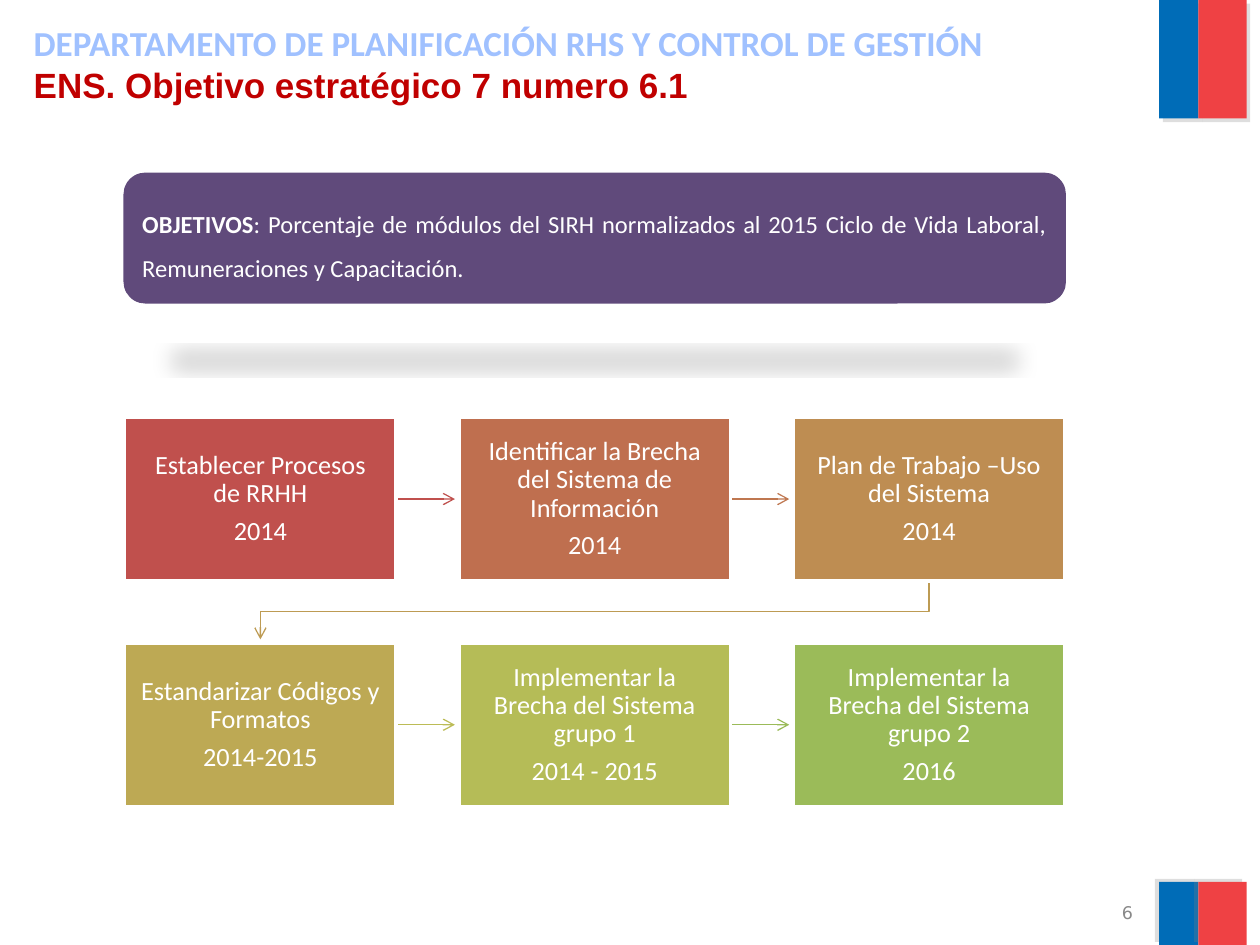
from dataclasses import dataclass

import pptx
import pptx.util
from lxml import etree
from pptx.dml.color import RGBColor
from pptx.enum.shapes import MSO_CONNECTOR, MSO_SHAPE
from pptx.enum.text import MSO_ANCHOR, PP_ALIGN
from pptx.oxml import parse_xml
from pptx.oxml.ns import qn
from pptx.util import Cm, Pt


@dataclass(frozen=True)
class Theme:
    blue: str = "006CB7"
    red: str = "EF4144"
    purple: str = "604A7B"
    white: str = "FFFFFF"
    sky: str = "A0C1FF"
    dark: str = "C00000"
    grey: str = "898989"
    head: int = 20
    goal: int = 14
    step: int = 15
    page: int = 10


theme = Theme()


def write(par, text, size=theme.step, font="Calibri", color=theme.white, bold=False,
          align=None, lead=None, after=None):
    """Add one run to a paragraph and set the paragraph's format where given."""
    run = par.add_run()
    run.text = text
    run.font.size = Pt(size)
    run.font.name = font
    run.font.bold = bold
    run.font.color.rgb = RGBColor.from_string(color)
    if align is not None:
        par.alignment = align
    if lead is not None:
        par.line_spacing = lead
    if after is not None:
        par.space_after = Pt(after)


def block(kind, left, top, width, height, fill, shade=None):
    """Add a filled shape without outline; shade holds a shadow's attributes, colour and alpha."""
    shape = slide.shapes.add_shape(kind, Cm(left), Cm(top), Cm(width), Cm(height))
    shape.fill.solid()
    shape.fill.fore_color.rgb = RGBColor.from_string(fill)
    shape.line.fill.background()
    shape.shadow.inherit = False
    if shade:
        attrs, color, alpha = shade
        effect = shape._element.spPr.find(qn("a:effectLst"))
        effect.append(parse_xml(
            '<a:outerShdw xmlns:a="http://schemas.openxmlformats.org/drawingml/2006/main" '
            f'{attrs} rotWithShape="0"><a:srgbClr val="{color}">'
            f'<a:alpha val="{alpha}000"/></a:srgbClr></a:outerShdw>'))
    return shape


deck = pptx.Presentation()
deck.slide_width, deck.slide_height = Cm(25.4), Cm(19.05)
slide = deck.slides.add_slide(deck.slide_layouts[6])

# Flag bars at the top and bottom right
for top, high, turn in ((0, 2.39, 45), (17.78, 1.27, 215)):
    shade = (f'dist="38100" dir="{turn * 60000}"', "808080", 25)
    for left, wide, fill in ((23.37, 0.79, theme.blue), (24.16, 0.97, theme.red)):
        block(MSO_SHAPE.RECTANGLE, left, top, wide, high, fill, shade)

# Page number
page = slide.shapes.add_textbox(Cm(17.17), Cm(18.14), Cm(5.92), Cm(0.53)).text_frame
page.word_wrap = True
page.vertical_anchor = MSO_ANCHOR.MIDDLE
write(page.paragraphs[0], "6", size=theme.page, font="DejaVu Sans", color=theme.grey,
      align=PP_ALIGN.RIGHT)

# Objective
goal = block(MSO_SHAPE.ROUNDED_RECTANGLE, 2.49, 3.48, 19, 2.64, theme.purple,
             ('blurRad="152400" dist="317500" dir="5400000" sx="90000" sy="-19000"',
              "000000", 15)).text_frame
goal.word_wrap = True
goal.vertical_anchor = MSO_ANCHOR.MIDDLE
par = goal.paragraphs[0]
write(par, "OBJETIVOS", size=theme.goal, bold=True, align=PP_ALIGN.JUSTIFY, lead=1.5)
write(par, ": Porcentaje de módulos del SIRH normalizados al 2015 Ciclo de Vida Laboral, "
      "Remuneraciones y Capacitación.", size=theme.goal)

# Steps: text, year, box colour, colour of the arrow to the next step
steps = [
    ("Establecer Procesos de RRHH", "2014", "C0504D", "C0504D"),
    ("Identificar la Brecha del Sistema de Información", "2014", "BF6F4F", "BF7750"),
    ("Plan de Trabajo –Uso del Sistema", "2014", "BE8D52", "BD9B53"),
    ("Estandarizar Códigos y Formatos", "2014-2015", "BDA954", "BCBC56"),
    ("Implementar la Brecha del Sistema grupo 1", "2014 - 2015", "B5BC57", "9BBB59"),
    ("Implementar la Brecha del Sistema grupo 2", "2016", "9BBB59", None),
]
cols = 3
wide, high = 5.48, 3.3
left, top = 2.51, 8.41
across, down = 6.74, 4.55
gap = 1.18

for i, (text, year, fill, tint) in enumerate(steps):
    row, col = divmod(i, cols)
    x, y = left + col * across, top + row * down
    mid = x + wide / 2

    if tint:
        if col < cols - 1:
            arrow = slide.shapes.add_connector(
                MSO_CONNECTOR.STRAIGHT, Cm(x + wide), Cm(y + high / 2),
                Cm(x + wide + gap), Cm(y + high / 2))
        else:
            base, first = y + high, left + wide / 2
            turn = base + (down - high) / 2
            path = slide.shapes.build_freeform(Cm(mid), Cm(base))
            path.add_line_segments([(Cm(mid), Cm(turn)), (Cm(first), Cm(turn)),
                                    (Cm(first), Cm(base + gap))], close=False)
            arrow = path.convert_to_shape()
            arrow.fill.background()
        arrow.line.width = Pt(0.75)
        arrow.line.color.rgb = RGBColor.from_string(tint)
        props = arrow._element.spPr
        etree.SubElement(props.find(qn("a:ln")), qn("a:tailEnd"), type="arrow")
        etree.SubElement(props, qn("a:effectLst"))

    box = block(MSO_SHAPE.RECTANGLE, x, y, wide, high, fill)
    box.line.color.rgb = RGBColor.from_string(theme.white)
    box.line.width = Pt(2)
    frame = box.text_frame
    frame.word_wrap = True
    frame.vertical_anchor = MSO_ANCHOR.MIDDLE
    frame.margin_left = frame.margin_right = Cm(0.3)
    frame.margin_top = frame.margin_bottom = Cm(0.3)
    for par, line in ((frame.paragraphs[0], text), (frame.add_paragraph(), year)):
        write(par, line, align=PP_ALIGN.CENTER, lead=0.9, after=5.25)

# Heading
head = slide.shapes.add_textbox(Cm(0.43), Cm(0.3), Cm(22.68), Cm(3.18)).text_frame
head.word_wrap = True
par = head.paragraphs[0]
write(par, "DEPARTAMENTO DE PLANIFICACIÓN RHS Y CONTROL DE GESTIÓN",
      size=theme.head, color=theme.sky, bold=True)
par.add_line_break()
write(par, "ENS. Objetivo estratégico 7 numero 6.1",
      size=theme.head, font="Arial", color=theme.dark, bold=True)

deck.save("out.pptx")
